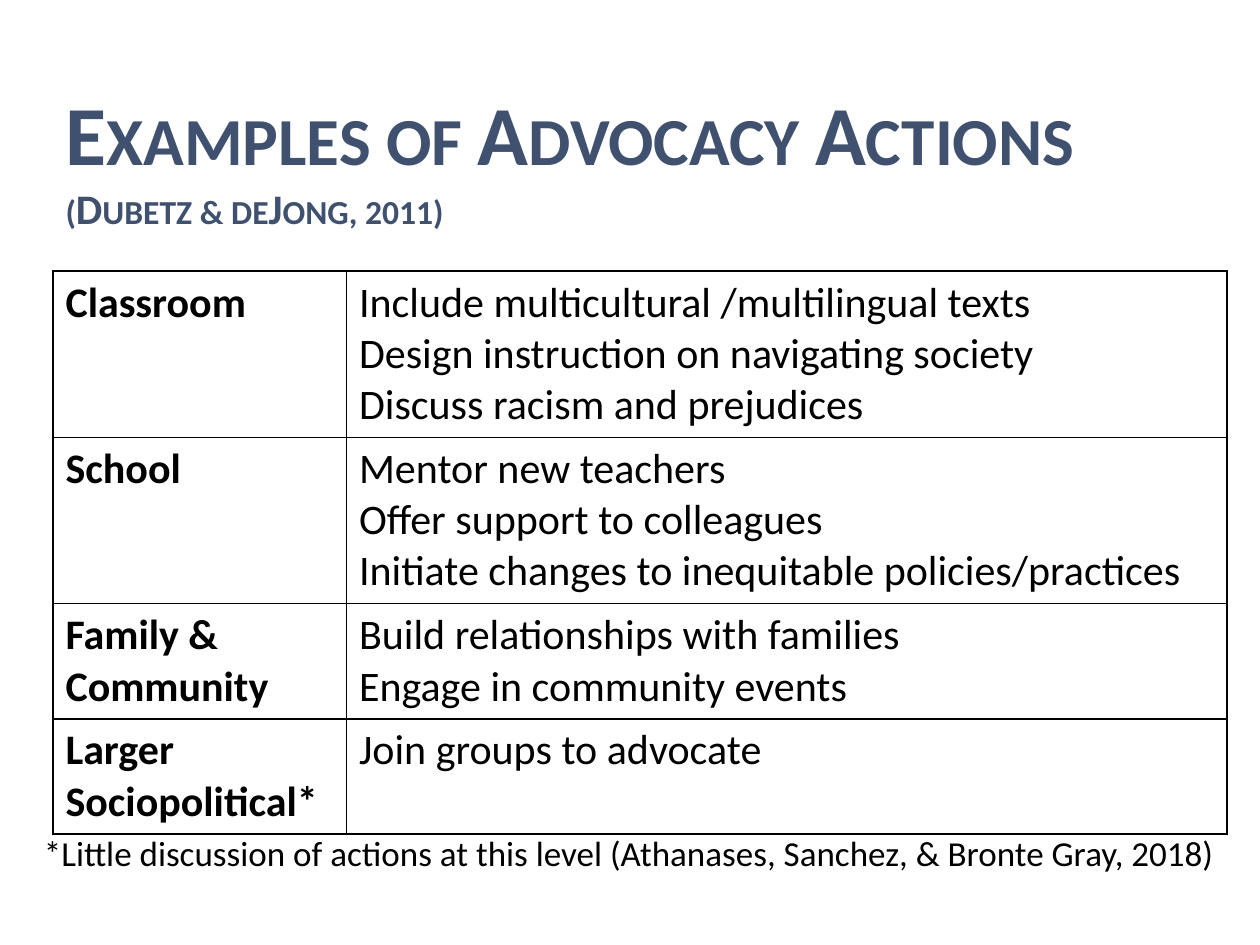
from lxml.etree import SubElement
from pptx import Presentation
from pptx.dml.color import RGBColor
from pptx.enum.text import MSO_ANCHOR, MSO_AUTO_SIZE, PP_ALIGN
from pptx.oxml import parse_xml
from pptx.oxml.ns import nsdecls, qn
from pptx.util import Inches, Pt

NAVY = RGBColor(0x40, 0x51, 0x6F)
BLACK = RGBColor(0, 0, 0)
FONT = "Calibri"
LEFT = Inches(0.42)
LINE_HEIGHT, CELL_PADDING = 0.4, 0.1

ACTIONS = [
    ("Classroom", 3, ["Include multicultural /multilingual texts",
                      "Design instruction on navigating society",
                      "Discuss racism and prejudices"]),
    ("School", 3, ["Mentor new teachers",
                   "Offer support to colleagues",
                   "Initiate changes to inequitable policies/practices"]),
    ("Family & Community", 2, ["Build relationships with families",
                               "Engage in community events"]),
    ("Larger Sociopolitical*", 2, ["Join groups to advocate"]),
]


def write(frame, lines, sizes, color, bold):
    frame.text = "\n".join(lines)
    for paragraph, size in zip(frame.paragraphs, sizes):
        paragraph.alignment = PP_ALIGN.LEFT
        font = paragraph.font
        font.name, font.size, font.bold = FONT, Pt(size), bold
        font.color.rgb = color


def outline(cell):
    properties = cell._tc.get_or_add_tcPr()
    for position, side in enumerate(("lnL", "lnR", "lnT", "lnB")):
        properties.insert(position, parse_xml(
            f'<a:{side} {nsdecls("a")} w="12700"><a:solidFill>'
            f'<a:srgbClr val="{BLACK}"/></a:solidFill></a:{side}>'))


deck = Presentation()
deck.slide_width, deck.slide_height = Inches(10), Inches(7.5)
slide = deck.slides.add_slide(deck.slide_layouts[5])

# Title with its citation, in small capitals
title = slide.shapes.title
title.left, title.top = LEFT, Inches(0.7)
title.width, title.height = Inches(9.16), Inches(1.25)
heading = title.text_frame
heading.auto_size = MSO_AUTO_SIZE.NONE
heading.vertical_anchor = MSO_ANCHOR.BOTTOM
heading.margin_left = heading.margin_right = Inches(0.1)
heading.margin_top = heading.margin_bottom = Inches(0.1)
write(heading, ["Examples of Advocacy Actions", "(Dubetz & deJong, 2011)"],
      [48, 24], NAVY, True)
for paragraph in heading.paragraphs:
    paragraph.space_before = Pt(0)
    for run in paragraph.runs:
        run.font._element.set("cap", "small")

# Actions at each level; row heights follow the number of text lines
table = slide.shapes.add_table(len(ACTIONS), 2, LEFT, Inches(2.15),
                               Inches(9.32), Inches(4.4)).table
table.first_row = table.horz_banding = False
table.columns[0].width, table.columns[1].width = Inches(2.33), Inches(6.99)
for row, (level, line_count, actions) in enumerate(ACTIONS):
    table.rows[row].height = Inches(line_count * LINE_HEIGHT + CELL_PADDING)
    for column, lines in enumerate(([level], actions)):
        cell = table.cell(row, column)
        write(cell.text_frame, lines, [24] * len(lines), BLACK, column == 0)
        cell.fill.background()
        outline(cell)

# Footnote
footnote = slide.shapes.add_textbox(Inches(0.25), Inches(6.55),
                                    Inches(10), Inches(0.67)).text_frame
footnote.word_wrap = True
write(footnote, ["*Little discussion of actions at this level "
                 "(Athanases, Sanchez, & Bronte Gray, 2018)"],
      [20], BLACK, False)

deck.save("out.pptx")
